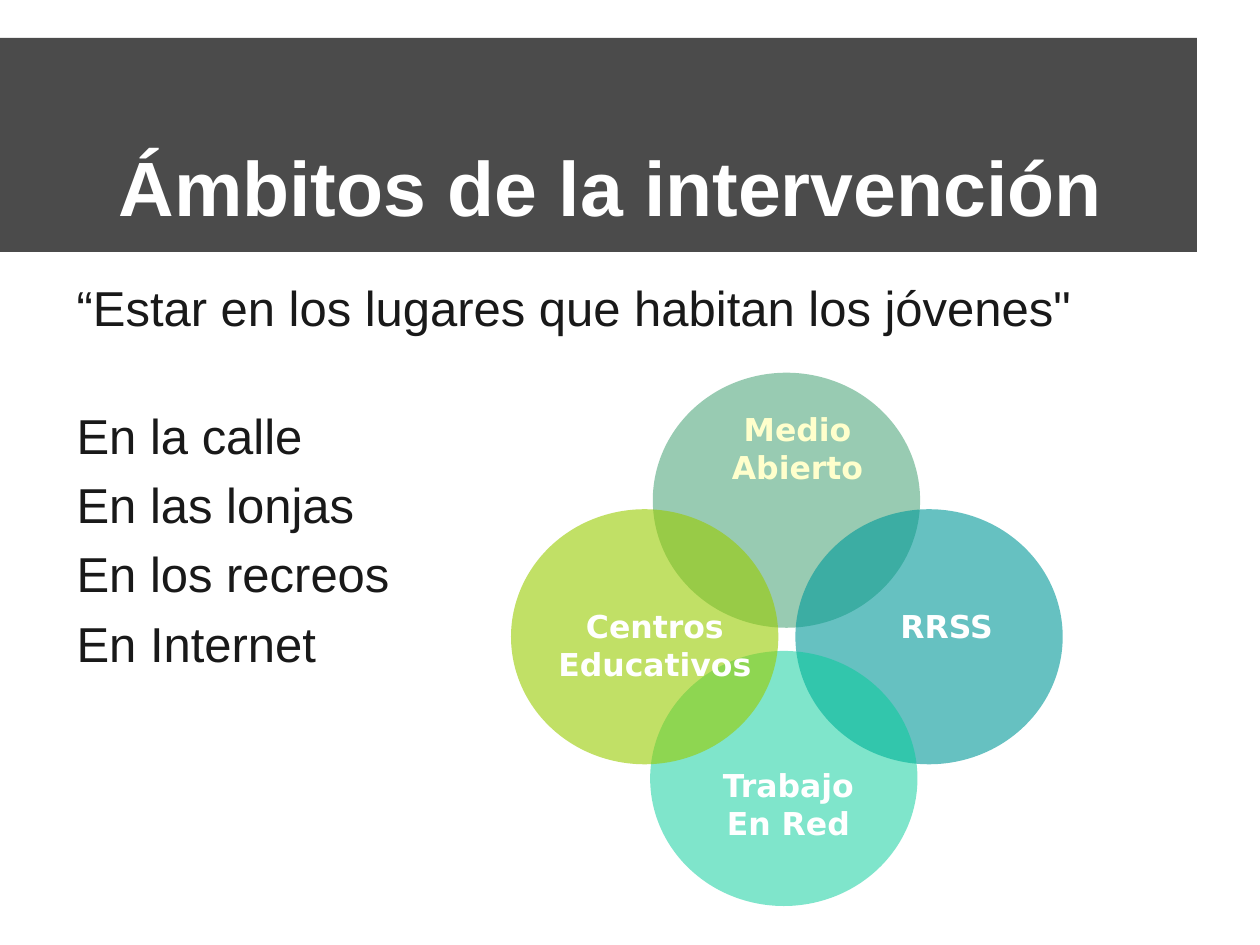
from pptx import Presentation
from pptx.dml.color import RGBColor
from pptx.enum.shapes import MSO_SHAPE
from pptx.enum.text import MSO_ANCHOR, PP_ALIGN
from pptx.oxml.ns import qn
from pptx.util import Pt
from lxml import etree

RECT, OVAL = MSO_SHAPE.RECTANGLE, MSO_SHAPE.OVAL
TOP, BOTTOM = MSO_ANCHOR.TOP, MSO_ANCHOR.BOTTOM
LEFT, CENTER = PP_ALIGN.LEFT, PP_ALIGN.CENTER

WHITE = RGBColor(0xFF, 0xFF, 0xFF)
CREAM = RGBColor(0xFF, 0xFF, 0xCC)
INK = RGBColor(0x19, 0x19, 0x19)
GRAY = RGBColor(0x4B, 0x4B, 0x4B)
GREEN = RGBColor(0x33, 0x99, 0x66)
TEAL = RGBColor(0x00, 0x99, 0x99)
MINT = RGBColor(0x00, 0xCC, 0x99)
LIME = RGBColor(0x99, 0xCC, 0x00)


class Deck:
    """Holds the text styles and the current slide."""

    title = {"name": "Arial", "size": Pt(44), "bold": True}
    body = {"name": "Arial", "size": Pt(28), "bold": False}
    label = {"name": "DejaVu Sans", "size": Pt(18), "bold": True}
    leading = 1.2

    def __init__(self, slide):
        self.slide = slide

    def shape(self, kind, box, color, alpha=100):
        item = self.slide.shapes.add_shape(kind, *map(Pt, box))
        item.shadow.inherit = False
        item.line.fill.background()
        item.fill.solid()
        item.fill.fore_color.rgb = color
        if alpha < 100:
            tone = item.fill._xPr.find(".//" + qn("a:srgbClr"))
            etree.SubElement(tone, qn("a:alpha"), val=str(alpha * 1000))

    def text(self, box, lines, style, color, pad=3.6, align=LEFT,
             anchor=TOP, gaps=(), indent=0):
        frame = self.slide.shapes.add_textbox(*map(Pt, box)).text_frame
        form = {"word_wrap": True, "vertical_anchor": anchor,
                "margin_left": Pt(7.2), "margin_right": Pt(7.2),
                "margin_top": Pt(pad), "margin_bottom": Pt(pad)}
        for key, value in form.items():
            setattr(frame, key, value)
        for i, line in enumerate(lines):
            para = frame.paragraphs[0] if i == 0 else frame.add_paragraph()
            para.alignment = align
            para.line_spacing = Pt(style["size"].pt * self.leading)
            if gaps:
                para.space_before = Pt(gaps[i])
            if indent:
                para._p.get_or_add_pPr().set("indent", str(Pt(indent)))
            run = para.add_run()
            run.text = line
            for key, value in style.items():
                setattr(run.font, key, value)
            run.font.color.rgb = color


def main():
    prs = Presentation()
    prs.slide_width, prs.slide_height = Pt(720), Pt(540)
    deck = Deck(prs.slides.add_slide(prs.slide_layouts[6]))

    # Title band
    deck.shape(RECT, (0, 21.6, 684, 122.4), GRAY)
    deck.text((36.75, 20.2, 648, 119.5), ["Ámbitos de la intervención"],
              deck.title, WHITE, pad=7.2, anchor=BOTTOM, indent=24)

    # Quote and places
    deck.text((36.75, 151.2, 648, 363.6),
              ["“Estar en los lugares que habitan los jóvenes\"",
               "En la calle", "En las lonjas", "En los recreos",
               "En Internet"],
              deck.body, INK, pad=7.2, gaps=(0, 39.6, 6, 6, 6))

    # Overlapping circles
    wide, high = 152.75, 145.75
    for x, y, color, alpha in ((373, 213, GREEN, 50), (454.5, 291, TEAL, 60),
                               (371.5, 372, MINT, 50), (292, 291, LIME, 60)):
        deck.shape(OVAL, (x, y, wide, high), color, alpha)

    # Circle labels
    for x, y, width, lines, color in (
            (393, 231, 125.5, ["Medio", "Abierto"], CREAM),
            (491, 343.5, 100, ["RRSS"], WHITE),
            (292.5, 343.5, 163.5, ["Centros", "Educativos"], WHITE),
            (372, 434, 157, ["Trabajo", "En Red"], WHITE)):
        deck.text((x, y, width, 46), lines, deck.label, color, align=CENTER)

    prs.save("out.pptx")


if __name__ == "__main__":
    main()
